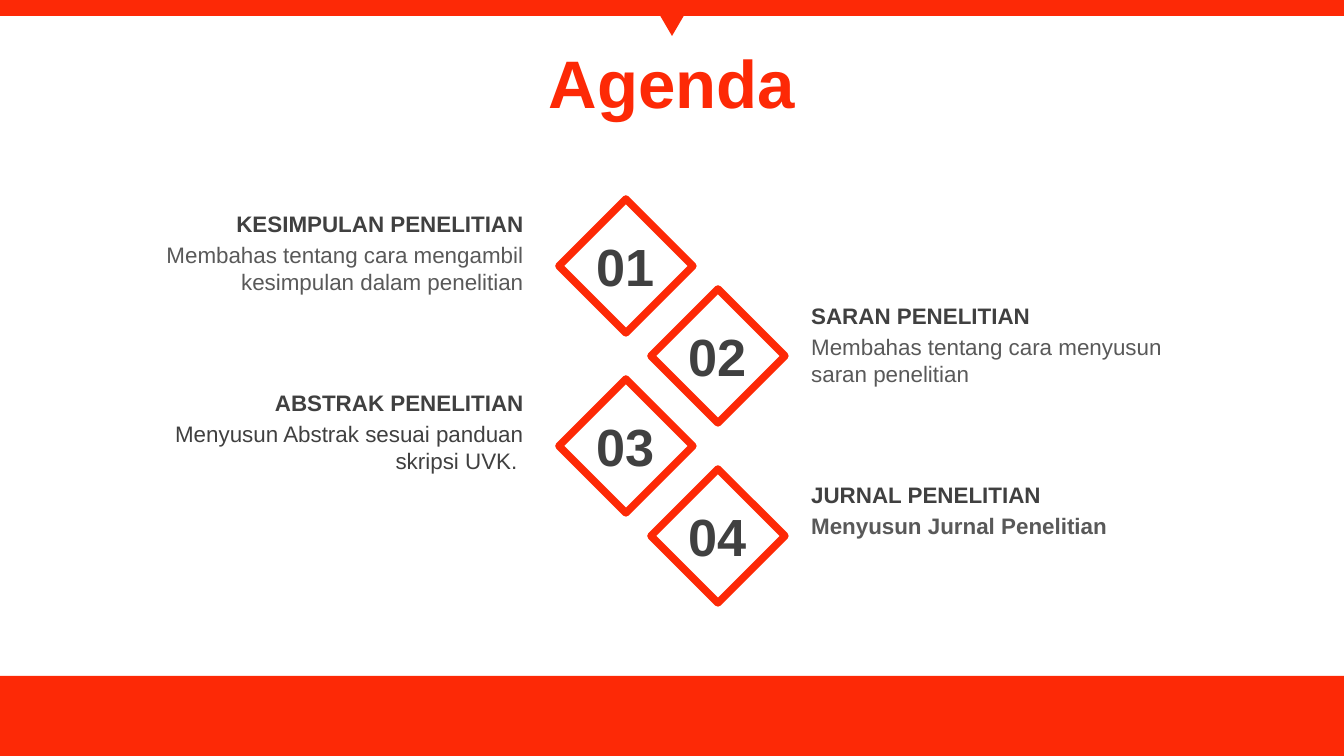
from lxml import etree
from pptx import Presentation
from pptx import util as u
from pptx.dml.color import RGBColor
from pptx.enum import shapes, text
from pptx.oxml import ns

SCALE = 914400 / 134.4
RED, DARK, GREY = "FD2906", "404040", "595959"
KIND = shapes.MSO_SHAPE
ALIGN = text.PP_ALIGN

ITEMS = [
    ("KESIMPULAN PENELITIAN",
     "Membahas tentang cara mengambil kesimpulan dalam penelitian", GREY, False),
    ("SARAN PENELITIAN",
     "Membahas tentang cara menyusun saran penelitian", GREY, False),
    ("ABSTRAK PENELITIAN",
     "Menyusun Abstrak sesuai panduan skripsi UVK. ", DARK, False),
    ("JURNAL PENELITIAN", "Menyusun Jurnal Penelitian", GREY, True),
]


def px(*sizes):
    return [u.Emu(round(size * SCALE)) for size in sizes]


def paint(target, color):
    target.solid()
    target.fore_color.rgb = RGBColor.from_string(color)


def write(frame, words, size=12, color=DARK, bold=False, align=ALIGN.LEFT,
          anchor=text.MSO_ANCHOR.TOP, wrap=True):
    frame.word_wrap = wrap
    frame.vertical_anchor = anchor
    para = frame.paragraphs[0]
    para.alignment = align
    run = para.add_run()
    run.text = words
    font = run.font
    font.name, font.size, font.bold = "Arial", u.Pt(size), bold
    paint(font.fill, color)


def label(slide, box, words, **style):
    write(slide.shapes.add_textbox(*px(*box)).text_frame, words, **style)


def solid(slide, kind, box, turn=0):
    shape = slide.shapes.add_shape(kind, *px(*box))
    shape.shadow.inherit = False
    shape.rotation = turn
    paint(shape.fill, RED)
    shape.line.fill.background()


def gem(slide, box):
    shape = slide.shapes.add_shape(KIND.DIAMOND, *px(*box))
    shape.shadow.inherit = False
    shape.fill.background()
    paint(shape.line.fill, RED)
    shape.line.width = u.Pt(4)
    etree.SubElement(shape.line._get_or_add_ln(), ns.qn("a:round"))


def frame(slide):
    solid(slide, KIND.RECTANGLE, (0, 676, 1344, 80))
    solid(slide, KIND.RECTANGLE, (0, 0, 1344, 16))
    solid(slide, KIND.ISOSCELES_TRIANGLE, (651, 0, 42, 36), 180)


def title(slide, words):
    shape = slide.shapes.title
    shape.left, shape.top, shape.width, shape.height = px(0, 17, 1344, 130)
    shape.text_frame.auto_size = text.MSO_AUTO_SIZE.NONE
    write(shape.text_frame, words, size=36, color=RED, bold=True,
          align=ALIGN.CENTER, anchor=text.MSO_ANCHOR.MIDDLE)


def item(slide, index, head, body, color, bold):
    row, side = divmod(index, 2)
    left, top = 559 + 92 * side, 199 + 90 * index
    gem(slide, (left, top, 134, 134))
    label(slide, (left + 24, top + 29, 86, 77), f"{index + 1:02}",
          size=28, bold=True, align=ALIGN.CENTER, wrap=False)
    edge = 798 if side else 99
    align = ALIGN.LEFT if side else ALIGN.RIGHT
    top = 204 + 179 * row + 92 * side
    label(slide, (edge, top + 31, 438, 67), body,
          color=color, bold=bold, align=align)
    label(slide, (edge, top, 438, 41), head, bold=True, align=align)


def main():
    deck = Presentation()
    deck.slide_width, deck.slide_height = px(1344, 756)
    slide = deck.slides.add_slide(deck.slide_layouts[5])
    frame(slide)
    title(slide, "Agenda")
    for index, entry in enumerate(ITEMS):
        item(slide, index, *entry)
    deck.save("out.pptx")


if __name__ == "__main__":
    main()
